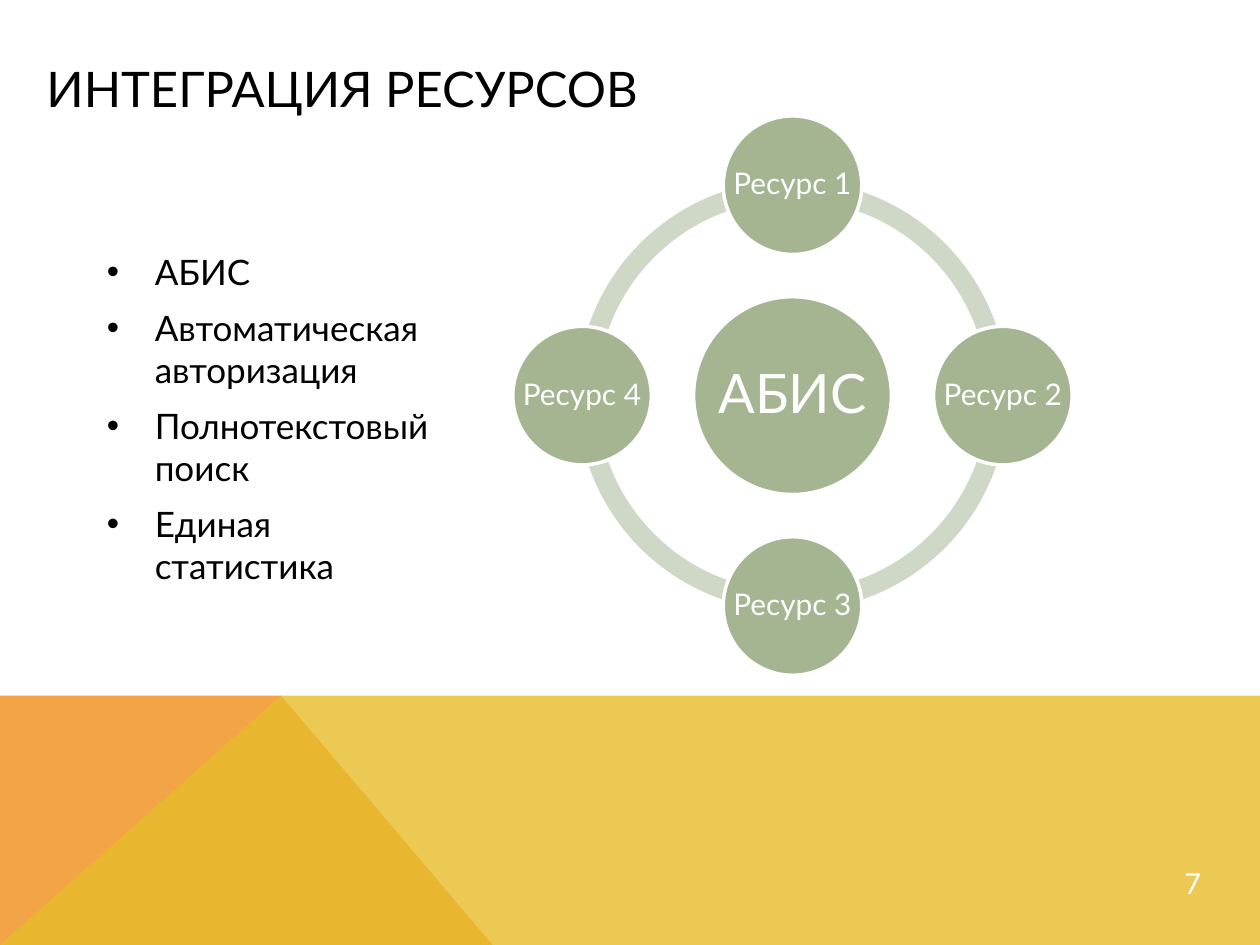
import math
from dataclasses import dataclass

from lxml import etree
from pptx import Presentation
from pptx import util as u
from pptx.dml import color
from pptx.enum import shapes, text
from pptx.oxml import ns


@dataclass(frozen=True)
class Theme:
    font: str = "Lato"
    ink: str = "000000"
    light: str = "FFFFFF"
    orange: str = "F3A447"
    gold: str = "E7BC29"
    ring: str = "CFD7C7"
    node: str = "A5B592"
    title_size: float = 28
    body_size: float = 20
    hub_size: float = 31
    node_size: float = 17
    number_size: float = 16.5


THEME = Theme()


def rgb(value):
    return color.RGBColor.from_string(value)


def apply_format(target, values):
    for name, value in values.items():
        setattr(target, name, value)


def paint(shape, fill, outline=None):
    shape.shadow.inherit = False
    shape.fill.solid()
    shape.fill.fore_color.rgb = rgb(fill)
    if outline:
        shape.line.color.rgb = rgb(outline)
        shape.line.width = u.Pt(2)
    else:
        shape.line.fill.background()


def write(paragraph, words, size, ink):
    run = paragraph.add_run()
    run.text = words
    apply_format(run.font, {"name": THEME.font, "size": u.Pt(size)})
    run.font.color.rgb = rgb(ink)


def add_text_frame(slide, box):
    frame = slide.shapes.add_textbox(*map(u.Inches, box)).text_frame
    frame.word_wrap = True
    return frame


def center_text(frame, words, size, margin):
    sides = ("left", "top", "right", "bottom")
    apply_format(frame, {f"margin_{side}": u.Inches(margin) for side in sides})
    apply_format(frame, {"word_wrap": False, "vertical_anchor": text.MSO_ANCHOR.MIDDLE})
    apply_format(frame.paragraphs[0], {"alignment": text.PP_ALIGN.CENTER, "line_spacing": 0.9})
    write(frame.paragraphs[0], words, size, THEME.light)


def add_polygon(slide, points, fill):
    start, *rest = [(u.Inches(x), u.Inches(y)) for x, y in points]
    builder = slide.shapes.build_freeform(*start)
    builder.add_line_segments(rest, close=True)
    polygon = builder.convert_to_shape()
    paint(polygon, fill)
    return polygon


def add_footer(slide, box):
    left, top, width, height = box
    right, bottom = left + width, top + height
    peak = (left + 2.23, top)
    add_polygon(slide, [(left, bottom), (left, top), peak, (left + 3.91, bottom)], THEME.orange)
    slope = add_polygon(
        slide, [(left, bottom), peak, (right, top), (right, bottom)], THEME.gold)
    tint = slope.fill._xPr.find(".//" + ns.qn("a:srgbClr"))
    etree.SubElement(tint, ns.qn("a:alpha"), val="80000")


def add_title(slide, box, words):
    frame = add_text_frame(slide, box)
    frame.vertical_anchor = text.MSO_ANCHOR.MIDDLE
    write(frame.paragraphs[0], words, THEME.title_size, THEME.ink)


def add_bullets(slide, box, items):
    frame = add_text_frame(slide, box)
    indent = u.Inches(0.38)
    for index, item in enumerate(items):
        paragraph = frame.add_paragraph() if index else frame.paragraphs[0]
        paragraph.space_before = u.Pt(8)
        properties = paragraph._p.get_or_add_pPr()
        properties.set("marL", str(indent))
        properties.set("indent", str(-indent))
        etree.SubElement(properties, ns.qn("a:buFont"), typeface="Arial")
        etree.SubElement(properties, ns.qn("a:buChar"), char="•")
        write(paragraph, item, THEME.body_size, THEME.ink)


def add_disc(slide, center, diameter, words, size, margin):
    x, y = center
    disc = slide.shapes.add_shape(
        shapes.MSO_SHAPE.OVAL,
        *map(u.Inches, (x - diameter / 2, y - diameter / 2, diameter, diameter)))
    paint(disc, THEME.node, THEME.light)
    center_text(disc.text_frame, words, size, margin)


def add_resource_ring(slide, box, hub, resources):
    left, top, width, height = box
    x, y = left + width / 2, top + height / 2
    node, ring, full_turn = 1.1, 3.42, 216
    orbit = (width - node) / 2
    step = full_turn / len(resources)
    for index in range(len(resources)):
        arc = slide.shapes.add_shape(
            shapes.MSO_SHAPE.BLOCK_ARC,
            *map(u.Inches, (x - ring / 2, y - ring / 2, ring, ring)))
        paint(arc, THEME.ring)
        angles = (index * step, (index + 1) * step % full_turn)
        for position, value in enumerate((*angles, 0.046)):
            arc.adjustments[position] = value
    add_disc(slide, (x, y), 1.57, hub, THEME.hub_size, 0.04)
    for index, resource in enumerate(resources):
        angle = math.tau * index / len(resources)
        center = (x + orbit * math.sin(angle), y - orbit * math.cos(angle))
        add_disc(slide, center, node, resource, THEME.node_size, 0.02)


def add_page_number(slide, box, number):
    badge = slide.shapes.add_shape(shapes.MSO_SHAPE.OVAL, *map(u.Inches, box))
    badge.shadow.inherit = False
    badge.fill.background()
    badge.line.fill.background()
    center_text(badge.text_frame, number, THEME.number_size, 0.01)


def main():
    deck = Presentation()
    apply_format(deck, {"slide_width": u.Inches(10), "slide_height": u.Inches(7.5)})
    slide = deck.slides.add_slide(deck.slide_layouts[6])
    add_footer(slide, (0, 5.52, 10, 1.98))
    add_bullets(slide, (0.75, 1.94, 2.91, 2.52), [
        "АБИС", "Автоматическая авторизация", "Полнотекстовый поиск", "Единая статистика"])
    add_title(slide, (0.27, 0.4, 9.61, 0.6), "ИНТЕГРАЦИЯ РЕСУРСОВ")
    add_page_number(slide, (9.19, 6.75, 0.55, 0.55), "7")
    add_resource_ring(
        slide, (4.07, 0.92, 4.44, 4.44), "АБИС", [f"Ресурс {n}" for n in range(1, 5)])
    deck.save("out.pptx")


if __name__ == "__main__":
    main()
